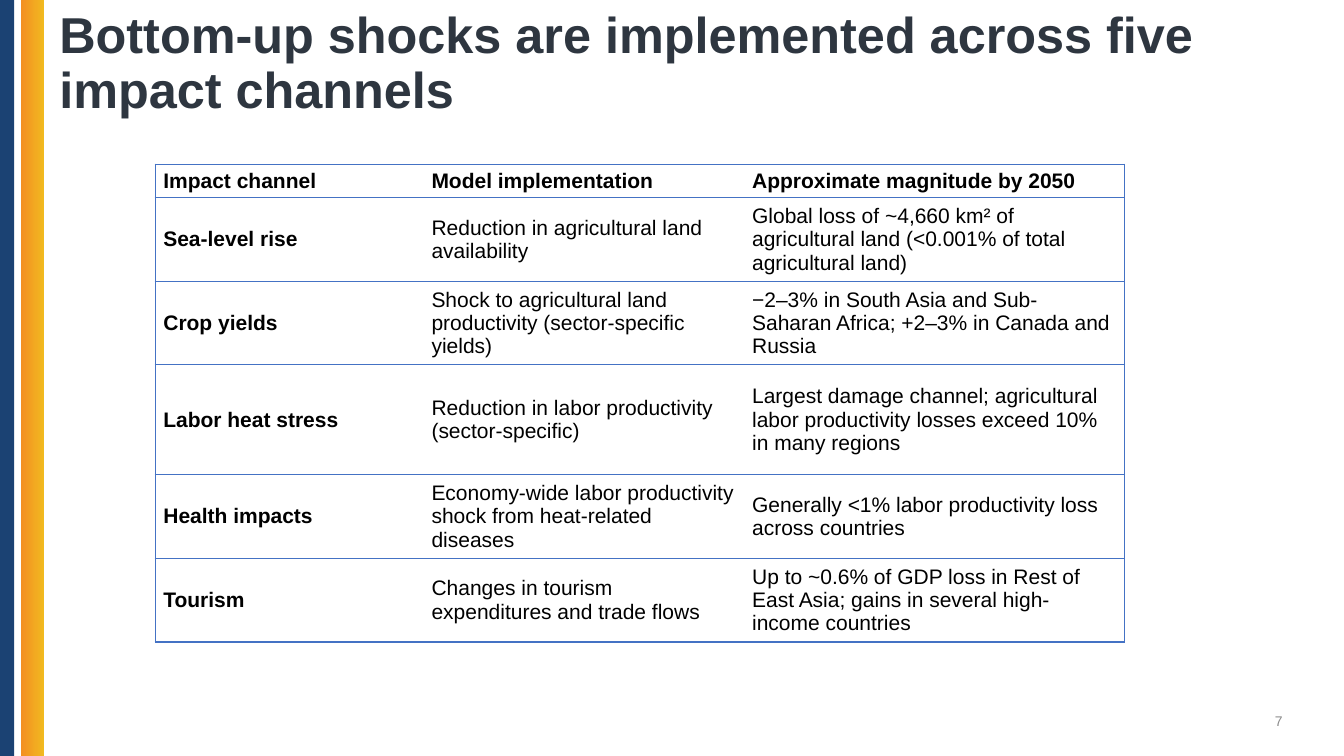
from dataclasses import dataclass

import pptx
import pptx.util
import pptx.dml.color
import pptx.enum.shapes
import pptx.enum.text
import pptx.oxml.ns
from lxml import etree

Inches = pptx.util.Inches
Pt = pptx.util.Pt
MIDDLE = pptx.enum.text.MSO_ANCHOR.MIDDLE


@dataclass(frozen=True)
class Theme:
    font: str = "Arial"
    navy: str = "1B4273"
    orange: str = "F38F22"
    gold: str = "F1BA20"
    heading: str = "2E3640"
    body: str = "000000"
    muted: str = "8C8C8C"
    rule: str = "4472C4"
    paper: str = "FFFFFF"
    title_size: int = 36
    table_size: int = 15
    number_size: int = 10


THEME = Theme()

COLUMN_WIDTHS = [2.66, 3.18, 3.77]
ROW_HEIGHTS = [0.33, 0.83, 0.83, 1.09, 0.83, 0.83]
CHANNELS = [
    ("Impact channel", "Model implementation", "Approximate magnitude by 2050"),
    ("Sea-level rise", "Reduction in agricultural land availability",
     "Global loss of ~4,660 km² of agricultural land (<0.001% of total agricultural land)"),
    ("Crop yields", "Shock to agricultural land productivity (sector-specific yields)",
     "−2–3% in South Asia and Sub-Saharan Africa; +2–3% in Canada and Russia"),
    ("Labor heat stress", "Reduction in labor productivity (sector-specific)",
     "Largest damage channel; agricultural labor productivity losses exceed 10% in many regions"),
    ("Health impacts", "Economy-wide labor productivity shock from heat-related diseases",
     "Generally <1% labor productivity loss across countries"),
    ("Tourism", "Changes in tourism expenditures and trade flows",
     "Up to ~0.6% of GDP loss in Rest of East Asia; gains in several high-income countries"),
]


def rgb(color):
    return pptx.dml.color.RGBColor.from_string(color)


def style_text(paragraph, size, color, bold=False):
    font = paragraph.font
    font.name, font.size, font.bold = THEME.font, Pt(size), bold
    font.color.rgb = rgb(color)


def add_stripe(slide, left, width, colors):
    """Full-height stripe: one colour is solid, two make a gradient."""
    stripe = slide.shapes.add_shape(pptx.enum.shapes.MSO_SHAPE.RECTANGLE,
                                    Inches(left), 0, Inches(width), Inches(7.5))
    stripe.shadow.inherit = False
    stripe.line.fill.background()
    if len(colors) == 1:
        stripe.fill.solid()
        stripe.fill.fore_color.rgb = rgb(colors[0])
    else:
        stripe.fill.gradient()
        stripe.fill.gradient_angle = 0
        for stop, color in zip(stripe.fill.gradient_stops, colors):
            stop.color.rgb = rgb(color)


def add_text(slide, box, text, size, color, bold=False, align=None, spacing=None):
    frame = slide.shapes.add_textbox(*map(Inches, box)).text_frame
    frame.word_wrap = True
    frame.vertical_anchor = MIDDLE
    paragraph = frame.paragraphs[0]
    paragraph.text = text
    paragraph.alignment = align
    paragraph.line_spacing = spacing
    style_text(paragraph, size, color, bold)


def set_borders(cell, ruled_sides):
    properties = cell._tc.get_or_add_tcPr()
    qn = pptx.oxml.ns.qn
    for side in "LRTB":
        line = etree.SubElement(properties, qn(f"a:ln{side}"), w=str(Pt(1)))
        if side in ruled_sides:
            fill = etree.SubElement(line, qn("a:solidFill"))
            etree.SubElement(fill, qn("a:srgbClr"), val=THEME.rule)
        else:
            etree.SubElement(line, qn("a:noFill"))


def fill_cell(cell, text, bold, ruled_sides):
    cell.text = text
    cell.vertical_anchor = MIDDLE
    cell.margin_left = cell.margin_right = Inches(0.08)
    cell.margin_top = cell.margin_bottom = Inches(0.04)
    style_text(cell.text_frame.paragraphs[0], THEME.table_size, THEME.body, bold)
    set_borders(cell, ruled_sides)
    cell.fill.solid()
    cell.fill.fore_color.rgb = rgb(THEME.paper)


def add_channel_table(slide, left, top):
    table = slide.shapes.add_table(
        len(ROW_HEIGHTS), len(COLUMN_WIDTHS), Inches(left), Inches(top),
        Inches(sum(COLUMN_WIDTHS)), Inches(sum(ROW_HEIGHTS))).table
    table.first_row = table.horz_banding = False
    for column, width in zip(table.columns, COLUMN_WIDTHS):
        column.width = Inches(width)
    for row, height in zip(table.rows, ROW_HEIGHTS):
        row.height = Inches(height)

    # Horizontal rules everywhere, vertical rules only on the outer edges
    outer_sides = ["LTB", "TB", "RTB"]
    for r, channel in enumerate(CHANNELS):
        for c, text in enumerate(channel):
            fill_cell(table.cell(r, c), text, r == 0 or c == 0, outer_sides[c])


def main():
    deck = pptx.Presentation()
    deck.slide_width, deck.slide_height = Inches(13.33), Inches(7.5)
    slide = deck.slides.add_slide(deck.slide_layouts[6])

    # Side stripes
    add_stripe(slide, -0.03, 0.17, [THEME.navy])
    add_stripe(slide, 0.21, 0.23, [THEME.orange, THEME.gold])

    # Title and slide number
    add_text(slide, (0.49, 0, 12, 1.28),
             "Bottom-up shocks are implemented across five impact channels",
             THEME.title_size, THEME.heading, bold=True, spacing=0.9)
    add_text(slide, (9.82, 6.95, 3, 0.4), "7", THEME.number_size, THEME.muted,
             align=pptx.enum.text.PP_ALIGN.RIGHT)

    # Impact channels
    add_channel_table(slide, 1.54, 1.63)

    deck.save("out.pptx")


if __name__ == "__main__":
    main()
